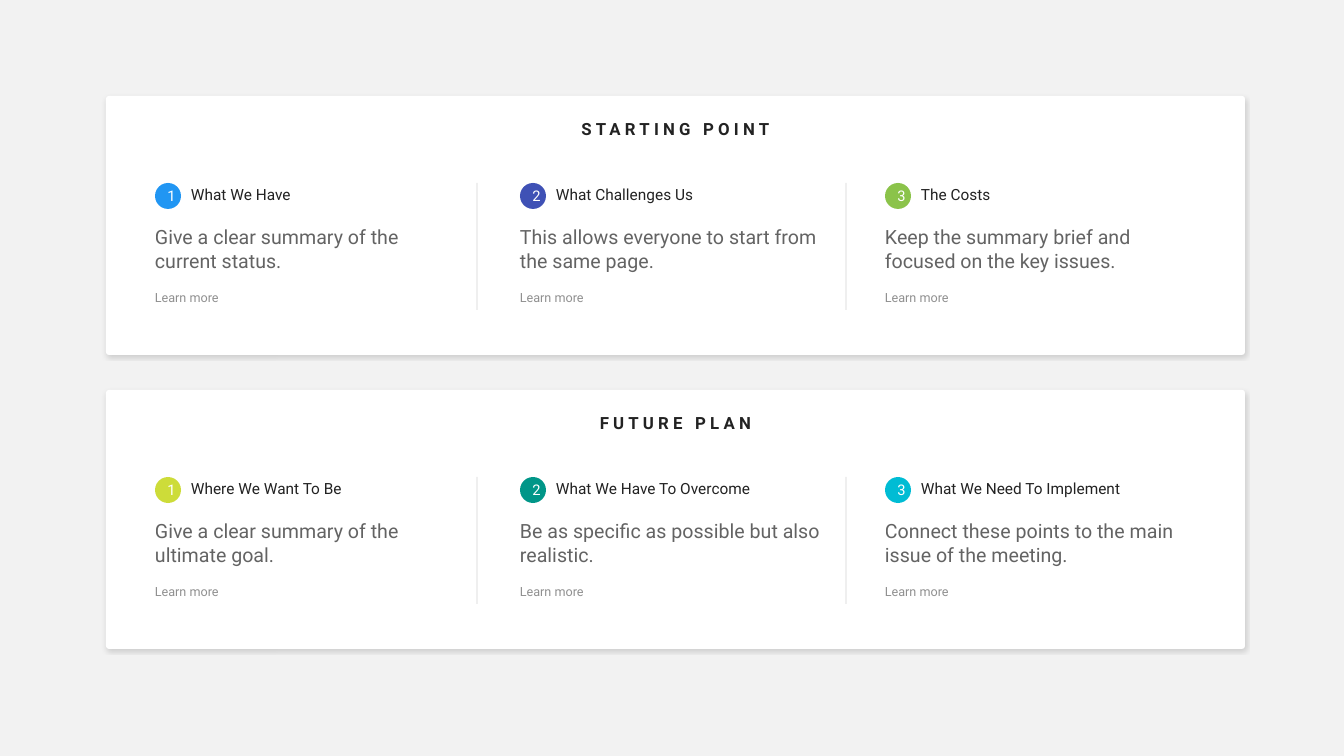
"""Build a slide with two cards, each setting out three numbered points."""
from lxml.etree import SubElement
from pptx import Presentation
from pptx.dml.color import RGBColor
from pptx.enum.shapes import MSO_CONNECTOR as Connector, MSO_SHAPE as Shape
from pptx.enum.text import MSO_ANCHOR as Anchor, PP_ALIGN as Align
from pptx.oxml.ns import qn
from pptx.util import Pt

COLORS = {
    "background": "F2F2F2", "card": "FFFFFF", "ink": "222222", "shadow": "000000",
    "blue": "2196F3", "indigo": "3F51B5", "green": "8BC34A",
    "lime": "CDDC39", "teal": "009688", "cyan": "00BCD4",
}
CARDS = [
    ("STARTING POINT", [
        ("What We Have", "Give a clear summary of the current status.", "blue"),
        ("What Challenges Us", "This allows everyone to start from the same page.", "indigo"),
        ("The Costs", "Keep the summary brief and focused on the key issues.", "green"),
    ]),
    ("FUTURE PLAN", [
        ("Where We Want To Be", "Give a clear summary of the ultimate goal.", "lime"),
        ("What We Have To Overcome", "Be as specific as possible but also realistic.", "teal"),
        ("What We Need To Implement", "Connect these points to the main issue of the meeting.", "cyan"),
    ]),
]
LINK = "Learn more"
FONT = "Roboto"
SCALE = 914400 / 100.8
CARD_LEFT, CARD_TOP, CARD_WIDTH, CARD_HEIGHT = 106, 96, 1139, 259
CARD_PITCH = 294
POINT_LEFT, POINT_PITCH, POINT_WIDTH = 145, 365, 320
BADGE_SIZE, BADGE_INDENT, HEADING_INDENT = 26, 10, 36
DIVIDERS = (477, 846)
DIVIDER_HEIGHT = 127


def px(*lengths):
    return [round(length * SCALE) for length in lengths]


def paint(color_format, name, opacity=100):
    color_format.rgb = RGBColor.from_string(COLORS[name])
    return opacity * 1000


def set_opacity(element, opacity):
    if opacity < 100:
        color = next(element.iter(qn("a:srgbClr")))
        SubElement(color, qn("a:alpha"), val=str(opacity * 1000))


def write(frame, text, size, color="ink", opacity=100, bold=False, align=None, line_spacing=None):
    frame.word_wrap = True
    paragraph = frame.paragraphs[0]
    paragraph.alignment = align
    paragraph.line_spacing = line_spacing
    run = paragraph.add_run()
    run.text = text
    run.font.name, run.font.size, run.font.bold = FONT, Pt(size), bold
    run.font.color.rgb = RGBColor.from_string(COLORS[color])
    set_opacity(run.font._element, opacity)
    return run


def add_text(shapes, box, text, size, **style):
    return write(shapes.add_textbox(*px(*box)).text_frame, text, size, **style)


def add_filled(shapes, kind, box, color):
    shape = shapes.add_shape(kind, *px(*box))
    shape.shadow.inherit = False
    shape.fill.solid()
    shape.fill.fore_color.rgb = RGBColor.from_string(COLORS[color])
    shape.line.fill.background()
    return shape


def add_panel(shapes, top):
    panel = add_filled(shapes, Shape.ROUNDED_RECTANGLE, (CARD_LEFT, top, CARD_WIDTH, CARD_HEIGHT), "card")
    panel.adjustments[0] = 0.012
    effects = panel._element.spPr.find(qn("a:effectLst"))
    shadow = SubElement(effects, qn("a:outerShdw"), blurRad=str(Pt(3)), dist=str(Pt(1)),
                        dir="5400000", algn="t", rotWithShape="0")
    SubElement(shadow, qn("a:srgbClr"), val=COLORS["shadow"])
    set_opacity(shadow, 15)


def add_point(shapes, left, top, number, heading, body, color):
    add_text(shapes, (left, top + 192, POINT_WIDTH, 29), LINK, 9, opacity=50, line_spacing=0.8)
    add_text(shapes, (left + HEADING_INDENT, top + 88, POINT_WIDTH - HEADING_INDENT, 27),
             heading, 11, line_spacing=0.8)
    add_text(shapes, (left, top + 124, POINT_WIDTH, 60), body, 14, opacity=70)
    badge = add_filled(shapes, Shape.OVAL, (left + BADGE_INDENT, top + 87, BADGE_SIZE, BADGE_SIZE), color)
    frame = badge.text_frame
    frame.margin_left, frame.margin_right, frame.margin_top, frame.margin_bottom = px(7, 0, 0, 0)
    frame.vertical_anchor = Anchor.MIDDLE
    write(frame, str(number), 10.5, color="card", align=Align.CENTER)


def add_divider(shapes, x, top):
    divider = shapes.add_connector(Connector.STRAIGHT, *px(x, top, x, top + DIVIDER_HEIGHT))
    divider.line.width = Pt(0.5)
    divider.line.color.rgb = RGBColor.from_string(COLORS["ink"])
    set_opacity(divider.line._ln, 20)
    SubElement(divider._element.spPr, qn("a:effectLst"))


def add_card(slide, top, title, points):
    shapes = slide.shapes.add_group_shape().shapes
    add_panel(shapes, top)
    run = add_text(shapes, (CARD_LEFT, top + 22, CARD_WIDTH, 29), title, 12,
                   bold=True, align=Align.CENTER, line_spacing=0.8)
    run.font._element.set("spc", "300")
    for index, point in enumerate(points):
        add_point(shapes, POINT_LEFT + index * POINT_PITCH, top, index + 1, *point)
    for x in DIVIDERS:
        add_divider(shapes, x, top + 87)


def main():
    presentation = Presentation()
    presentation.slide_width, presentation.slide_height = px(1344, 756)
    slide = presentation.slides.add_slide(presentation.slide_layouts[6])
    background = slide.background.fill
    background.solid()
    background.fore_color.rgb = RGBColor.from_string(COLORS["background"])
    for index, (title, points) in enumerate(CARDS):
        add_card(slide, CARD_TOP + index * CARD_PITCH, title, points)
    presentation.save("out.pptx")


if __name__ == "__main__":
    main()
